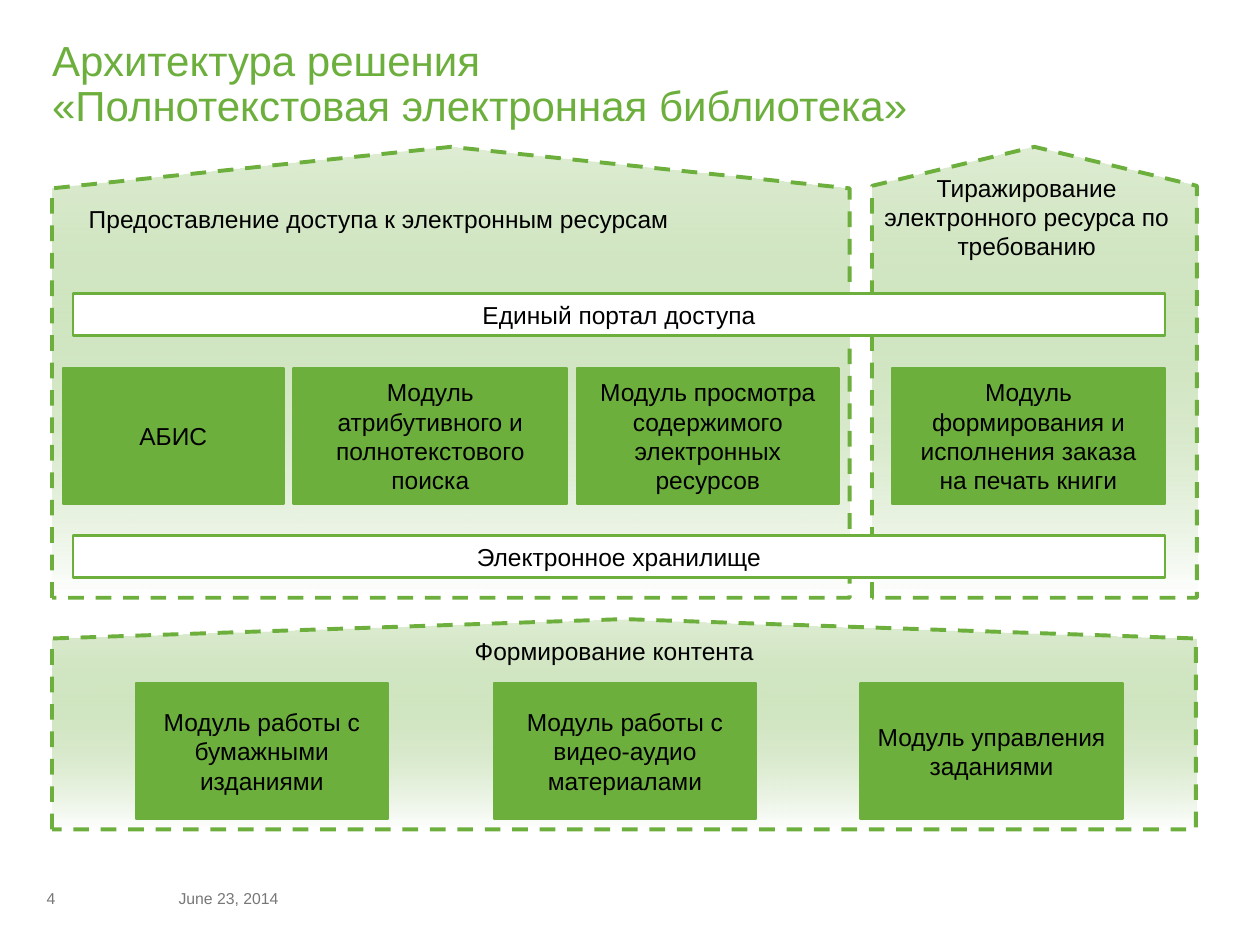
from dataclasses import dataclass

from lxml import etree
from pptx import Presentation
from pptx.dml.color import RGBColor
from pptx.enum import dml, shapes, text
from pptx.oxml.ns import qn
from pptx.util import Cm, Pt

GREEN, WHITE, BLACK, GRAY = "6DAF3D", "FFFFFF", "000000", "777777"
FONT = "Arial"
BAR_LEFT, BAR_WIDTH, BAR_HEIGHT = 1.47, 22.02, 0.84
MODULE_HEIGHT = 2.74
SERVICE_TOP, CONTENT_TOP = 7.42, 13.77


@dataclass
class Block:
    left: float
    top: float
    width: float
    height: float
    label: str
    fill: str


@dataclass
class House:
    left: float
    top: float
    width: float
    height: float
    roof: float
    label: str = ""
    inset: float = 0.13


@dataclass
class Label:
    left: float
    top: float
    width: float
    height: float
    label: str
    size: int
    color: str
    anchor: text.MSO_ANCHOR
    wrap: bool = True


def rgb(value: str) -> RGBColor:
    return RGBColor.from_string(value)


def bar(top: float, label: str) -> Block:
    return Block(BAR_LEFT, top, BAR_WIDTH, BAR_HEIGHT, label, WHITE)


def module(left: float, top: float, width: float, label: str) -> Block:
    return Block(left, top, width, MODULE_HEIGHT, label, GREEN)


HOUSES = [
    House(1.05, 12.48, 23.06, 4.24, 0.092),
    House(1.05, 2.96, 16.08, 9.09, 0.092,
          "Предоставление доступа к электронным ресурсам", 0.74),
    House(17.58, 2.96, 6.55, 9.09, 0.12,
          "Тиражирование электронного ресурса по требованию"),
]
BLOCKS = [
    bar(5.92, "Единый портал доступа"),
    bar(10.8, "Электронное хранилище"),
    module(1.27, SERVICE_TOP, 4.45, "АБИС"),
    module(5.92, SERVICE_TOP, 5.51, "Модуль атрибутивного и полнотекстового поиска"),
    module(11.63, SERVICE_TOP, 5.28, "Модуль просмотра содержимого электронных ресурсов"),
    module(17.98, SERVICE_TOP, 5.51,
           "Модуль формирования и исполнения заказа на печать книги"),
    module(2.74, CONTENT_TOP, 5.08, "Модуль работы с бумажными изданиями"),
    module(9.96, CONTENT_TOP, 5.28, "Модуль работы с видео-аудио материалами"),
    module(17.35, CONTENT_TOP, 5.28, "Модуль управления заданиями"),
]
LABELS = [
    Label(9.32, 12.7, 6.17, 0.86, "Формирование контента", 14, BLACK,
          text.MSO_ANCHOR.TOP, False),
    Label(3.35, 17.6, 5.59, 1.02, "June 23, 2014", 9, GRAY, text.MSO_ANCHOR.MIDDLE),
    Label(0.69, 17.6, 2.54, 1.02, "4", 9, GRAY, text.MSO_ANCHOR.MIDDLE),
]


def write(frame, content: str, size: int, color: str, align: text.PP_ALIGN):
    para = frame.paragraphs[0]
    para.text = content
    para.alignment = align
    para.font.name = FONT
    para.font.size = Pt(size)
    para.font.color.rgb = rgb(color)
    return para


def set_margins(frame, inset: float) -> None:
    frame.margin_left = frame.margin_right = Cm(inset)
    frame.margin_top = frame.margin_bottom = Cm(inset)


def add_title(page) -> None:
    title = page.shapes.title
    title.left, title.top, title.width, title.height = Cm(1.05), Cm(0.81), Cm(23.37), Cm(2.29)
    frame = title.text_frame
    set_margins(frame, 0)
    frame.auto_size = text.MSO_AUTO_SIZE.NONE
    frame.vertical_anchor = text.MSO_ANCHOR.TOP
    para = write(frame, "Архитектура решения\v«Полнотекстовая электронная библиотека»",
                 24, GREEN, text.PP_ALIGN.LEFT)
    para.line_spacing = 0.9


def add_house(page, house: House) -> None:
    left = house.left + (house.width - house.height) / 2
    top = house.top + (house.height - house.width) / 2
    plate = page.shapes.add_shape(shapes.MSO_SHAPE.PENTAGON, Cm(left), Cm(top),
                                  Cm(house.height), Cm(house.width))
    plate.rotation = 270
    plate.adjustments[0] = house.roof
    plate.shadow.inherit = False
    plate.fill.gradient()
    plate.fill.gradient_angle = 0
    for stop, color in zip(plate.fill.gradient_stops, (WHITE, GREEN)):
        stop.color.rgb = rgb(color)
    tint = plate.element.spPr.findall(".//" + qn("a:srgbClr"))[-1]
    etree.SubElement(tint, qn("a:alpha"), val="22000")
    plate.line.color.rgb = rgb(GREEN)
    plate.line.width = Pt(2.25)
    plate.line.dash_style = dml.MSO_LINE.DASH
    if house.label:
        frame = plate.text_frame
        frame.word_wrap = True
        frame.vertical_anchor = text.MSO_ANCHOR.TOP
        if house.inset != House.inset:
            set_margins(frame, house.inset)
        plate.element.txBody.bodyPr.set("vert", "eaVert")
        write(frame, house.label, 14, BLACK, text.PP_ALIGN.CENTER)


def add_block(page, block: Block) -> None:
    box = page.shapes.add_shape(shapes.MSO_SHAPE.RECTANGLE, Cm(block.left), Cm(block.top),
                                Cm(block.width), Cm(block.height))
    box.shadow.inherit = False
    box.fill.solid()
    box.fill.fore_color.rgb = rgb(block.fill)
    box.line.color.rgb = rgb(GREEN)
    box.line.width = Pt(1.5)
    box.text_frame.word_wrap = True
    box.text_frame.vertical_anchor = text.MSO_ANCHOR.MIDDLE
    write(box.text_frame, block.label, 14, BLACK, text.PP_ALIGN.CENTER)


def add_label(page, label: Label) -> None:
    box = page.shapes.add_textbox(Cm(label.left), Cm(label.top),
                                  Cm(label.width), Cm(label.height))
    box.text_frame.word_wrap = label.wrap
    box.text_frame.vertical_anchor = label.anchor
    write(box.text_frame, label.label, label.size, label.color, text.PP_ALIGN.LEFT)


def main() -> None:
    deck = Presentation()
    deck.slide_width, deck.slide_height = Cm(25.4), Cm(19.05)
    page = deck.slides.add_slide(deck.slide_layouts[5])
    add_title(page)
    for house in HOUSES:
        add_house(page, house)
    for block in BLOCKS:
        add_block(page, block)
    for label in LABELS:
        add_label(page, label)
    deck.save("out.pptx")


if __name__ == "__main__":
    main()
